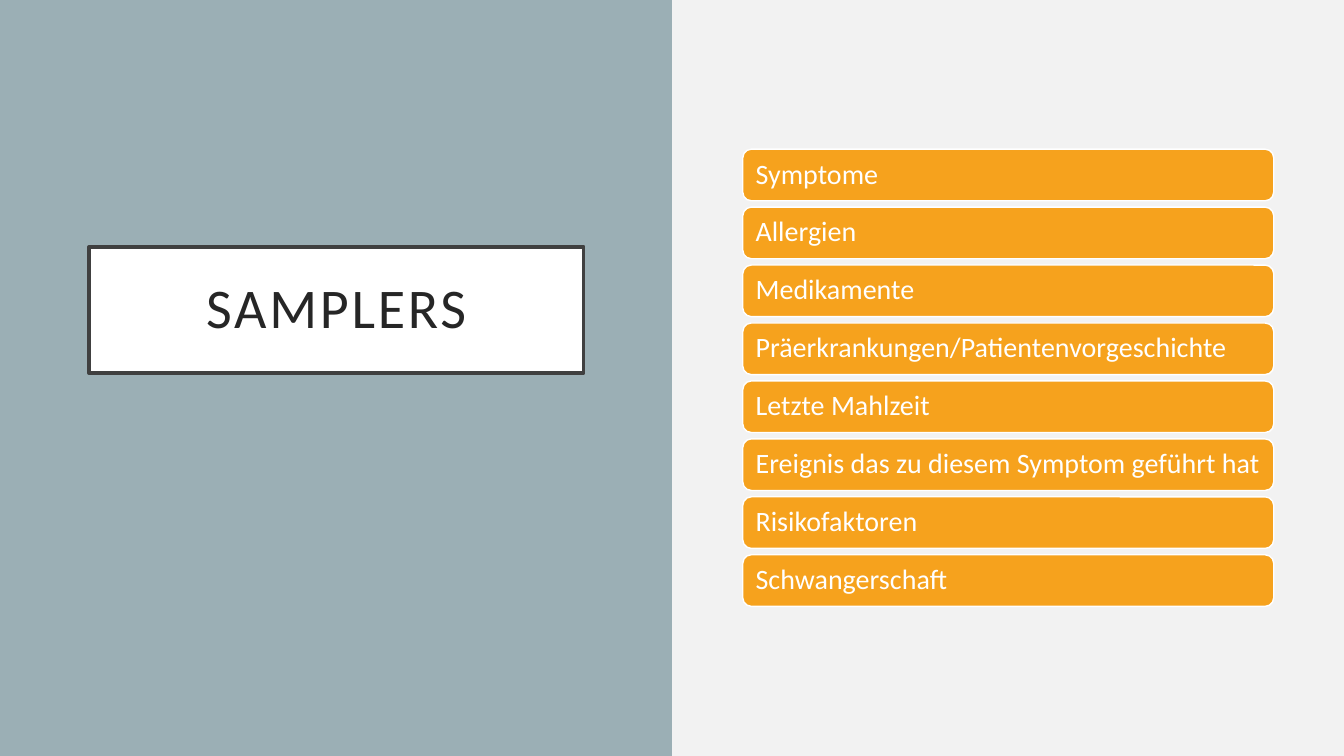
from pptx import Presentation
from pptx.dml.color import RGBColor
from pptx.enum import shapes, text
from pptx.util import Cm, Pt

BACKGROUND = RGBColor(0xF2, 0xF2, 0xF2)
PANEL = RGBColor(0x9B, 0xAF, 0xB5)
ORANGE = RGBColor(0xF6, 0xA2, 0x1D)
WHITE = RGBColor(0xFF, 0xFF, 0xFF)
BORDER = RGBColor(0x40, 0x40, 0x40)
TITLE_TEXT = RGBColor(0x26, 0x26, 0x26)

FONT = "Calibri"
ITEMS = [
    "Symptome",
    "Allergien",
    "Medikamente",
    "Präerkrankungen/Patientenvorgeschichte",
    "Letzte Mahlzeit",
    "Ereignis das zu diesem Symptom geführt hat",
    "Risikofaktoren",
    "Schwangerschaft",
]
BAR_LEFT, BAR_TOP = Cm(18.72), Cm(3.76)
BAR_WIDTH, BAR_HEIGHT = Cm(13.38), Cm(1.3)
BAR_PITCH = Cm(1.46)


def paint(sp, fill, line=None, width=1):
    sp.fill.solid()
    sp.fill.fore_color.rgb = fill
    if line is None:
        sp.line.fill.background()
    else:
        sp.line.color.rgb = line
        sp.line.width = Pt(width)


def write(sp, content, size, color, align, inset):
    tf = sp.text_frame
    tf.text = content
    tf.word_wrap = True
    tf.auto_size = text.MSO_AUTO_SIZE.NONE
    tf.vertical_anchor = text.MSO_ANCHOR.MIDDLE
    tf.margin_left = tf.margin_right = tf.margin_top = tf.margin_bottom = inset
    p = tf.paragraphs[0]
    p.alignment = align
    p.line_spacing = 0.9
    p.font.name = FONT
    p.font.size = Pt(size)
    p.font.color.rgb = color
    return p


def add_panel(s, width, height):
    sp = s.shapes.add_shape(shapes.MSO_SHAPE.RECTANGLE, 0, 0, width, height)
    sp.shadow.inherit = False
    paint(sp, PANEL)
    return sp


def set_title(s, panel, content):
    sp = s.shapes.title
    sp.left, sp.top, sp.width, sp.height = Cm(2.24), Cm(6.22), Cm(12.47), Cm(3.18)
    paint(sp, WHITE, BORDER, 2.5)
    p = write(sp, content, 40, TITLE_TEXT, text.PP_ALIGN.CENTER, Cm(0.5))
    # Letter spacing of 2 pt
    p.runs[0].font._element.set("spc", "200")
    # Title in front of the panel
    panel._element.addnext(sp._element)


def add_bar(group, top, content):
    sp = group.shapes.add_shape(shapes.MSO_SHAPE.ROUNDED_RECTANGLE,
                                BAR_LEFT, top, BAR_WIDTH, BAR_HEIGHT)
    sp.shadow.inherit = False
    paint(sp, ORANGE, WHITE)
    write(sp, content, 20, WHITE, text.PP_ALIGN.LEFT, Cm(0.26))


def main():
    prs = Presentation()
    prs.slide_width, prs.slide_height = Cm(33.87), Cm(19.05)
    s = prs.slides.add_slide(prs.slide_layouts[5])
    s.background.fill.solid()
    s.background.fill.fore_color.rgb = BACKGROUND

    # Left half with title
    panel = add_panel(s, prs.slide_width // 2, prs.slide_height)
    set_title(s, panel, "SAMPLERS")

    # Right half with the list of bars
    bars = s.shapes.add_group_shape()
    for i, item in enumerate(ITEMS):
        add_bar(bars, BAR_TOP + i * BAR_PITCH, item)

    prs.save("out.pptx")


if __name__ == "__main__":
    main()
